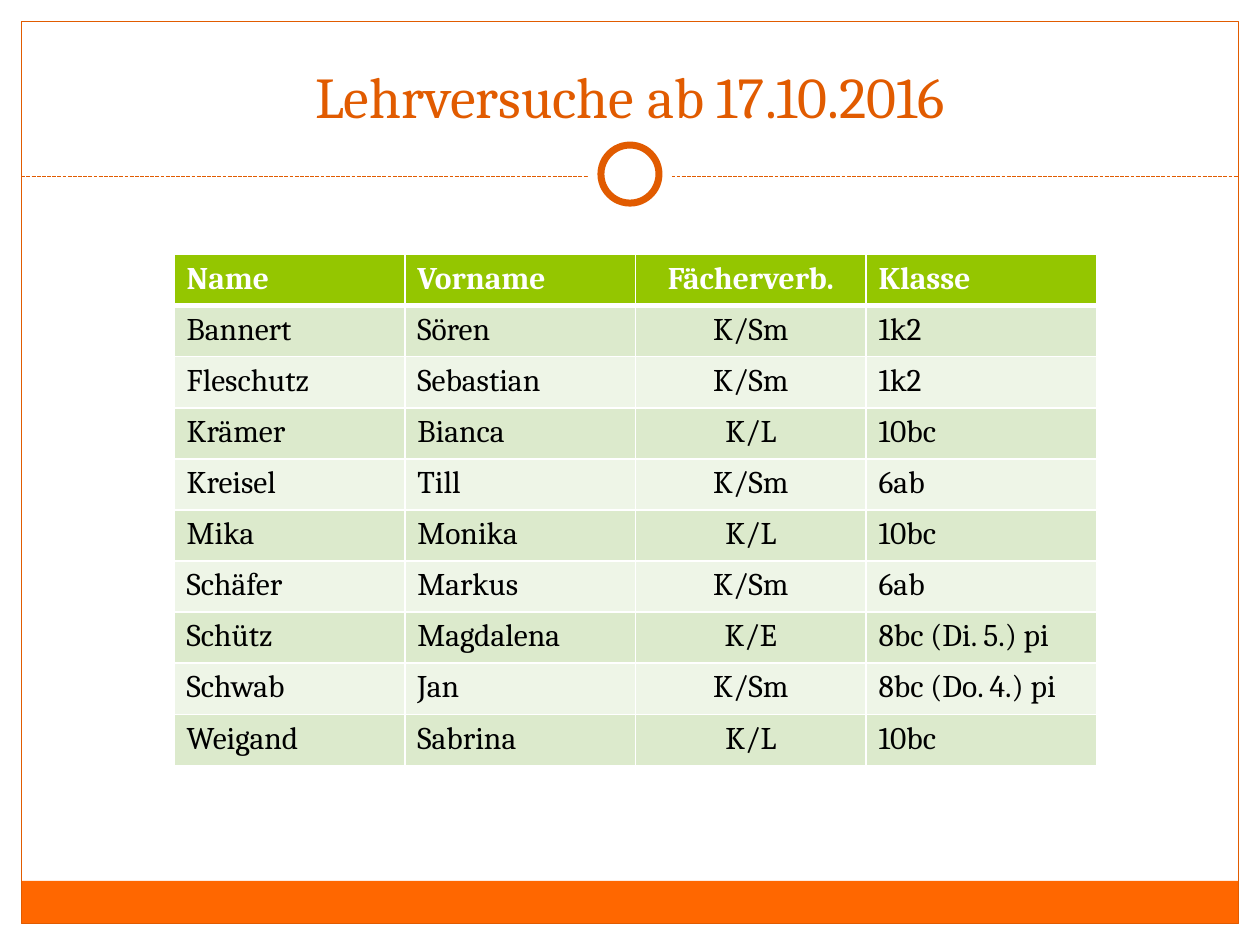
import dataclasses

import lxml.etree
import pptx
import pptx.dml.color
import pptx.enum.dml
import pptx.enum.shapes
import pptx.enum.text
import pptx.oxml.ns
import pptx.util

Cm = pptx.util.Cm
Pt = pptx.util.Pt
Align = pptx.enum.text.PP_ALIGN
Anchor = pptx.enum.text.MSO_ANCHOR
Shapes = pptx.enum.shapes.MSO_SHAPE


@dataclasses.dataclass(frozen=True)
class Theme:
    font: str = "Cambria"
    title_size: float = 33
    table_size: float = 18
    accent: str = "E15B00"
    bar: str = "FF6700"
    header: str = "94C600"
    bands: tuple = ("DCEACC", "EEF5E7")
    white: str = "FFFFFF"
    black: str = "000000"


@dataclasses.dataclass(frozen=True)
class Box:
    left: float
    top: float
    width: float
    height: float

    def lengths(self):
        return [Cm(value) for value in dataclasses.astuple(self)]


THEME = Theme()
HEADINGS = ("Name", "Vorname", "Fächerverb.", "Klasse")
LESSONS = (
    ("Bannert", "Sören", "K/Sm", "1k2"),
    ("Fleschutz", "Sebastian", "K/Sm", "1k2"),
    ("Krämer", "Bianca", "K/L", "10bc"),
    ("Kreisel", "Till", "K/Sm", "6ab"),
    ("Mika", "Monika", "K/L", "10bc"),
    ("Schäfer", "Markus", "K/Sm", "6ab"),
    ("Schütz", "Magdalena", "K/E", "8bc (Di. 5.) pi"),
    ("Schwab", "Jan", "K/Sm", "8bc (Do. 4.) pi"),
    ("Weigand", "Sabrina", "K/L", "10bc"),
)
CENTRED_COLUMN = HEADINGS.index("Fächerverb.")


def color(value):
    return pptx.dml.color.RGBColor.from_string(value)


def write_text(text_frame, text, size, fill, bold=False, align=Align.LEFT):
    paragraph = text_frame.paragraphs[0]
    paragraph.alignment = align
    run = paragraph.add_run()
    run.text = text
    run.font.name = THEME.font
    run.font.size = Pt(size)
    run.font.bold = bold
    run.font.color.rgb = color(fill)


def add_shape(slide, kind, box, fill=None, line=None, line_width=0.75):
    shape = slide.shapes.add_shape(kind, *box.lengths())
    shape.shadow.inherit = False
    if fill:
        shape.fill.solid()
        shape.fill.fore_color.rgb = color(fill)
    else:
        shape.fill.background()
    if line:
        shape.line.color.rgb = color(line)
        shape.line.width = Pt(line_width)
    else:
        shape.line.fill.background()


def add_circle(slide, center_x, center_y, diameter, **style):
    box = Box(center_x - diameter / 2, center_y - diameter / 2, diameter, diameter)
    add_shape(slide, Shapes.OVAL, box, **style)


def add_divider(slide, left, right, y):
    connector = slide.shapes.add_connector(
        pptx.enum.shapes.MSO_CONNECTOR.STRAIGHT, Cm(left), Cm(y), Cm(right), Cm(y))
    connector.line.color.rgb = color(THEME.accent)
    connector.line.width = Pt(0.75)
    connector.line.dash_style = pptx.enum.dml.MSO_LINE.SQUARE_DOT
    properties = connector.element.spPr
    lxml.etree.SubElement(properties, pptx.oxml.ns.qn("a:effectLst"))


def add_frame(slide, box):
    bar_height = 0.86
    bar = Box(box.left, box.top + box.height - bar_height, box.width, bar_height)
    add_shape(slide, Shapes.RECTANGLE, bar, fill=THEME.bar)
    add_shape(slide, Shapes.RECTANGLE, box, line=THEME.accent)
    add_divider(slide, box.left, box.left + box.width, box.top + 3.13)
    center = (box.left + box.width / 2, box.top + 3.08)
    add_circle(slide, *center, 1.7, fill=THEME.white)
    add_circle(slide, *center, 1.17, fill=THEME.white, line=THEME.accent, line_width=4)


def add_title(slide, box, text):
    text_frame = slide.shapes.add_textbox(*box.lengths()).text_frame
    text_frame.word_wrap = True
    text_frame.vertical_anchor = Anchor.BOTTOM
    write_text(text_frame, text, THEME.title_size, THEME.accent, align=Align.CENTER)


def set_borders(cell, **widths):
    qn = pptx.oxml.ns.qn
    properties = cell._tc.get_or_add_tcPr()
    for side, width in widths.items():
        line = lxml.etree.SubElement(properties, qn(f"a:ln{side}"), w=str(Pt(width)))
        fill = lxml.etree.SubElement(line, qn("a:solidFill"))
        lxml.etree.SubElement(fill, qn("a:srgbClr"), val=THEME.white)


def add_lesson_table(slide, box):
    rows = (HEADINGS,) + LESSONS
    table = slide.shapes.add_table(len(rows), len(HEADINGS), *box.lengths()).table
    for column in table.columns:
        column.width = Cm(box.width / len(HEADINGS))
    for row_index, values in enumerate(rows):
        table.rows[row_index].height = Cm(box.height / len(rows))
        is_header = row_index == 0
        fill = THEME.header if is_header else THEME.bands[(row_index - 1) % 2]
        for column_index, text in enumerate(values):
            cell = table.cell(row_index, column_index)
            set_borders(cell, L=1, R=1, T=3 if row_index == 1 else 1,
                        B=3 if is_header else 1)
            cell.fill.solid()
            cell.fill.fore_color.rgb = color(fill)
            write_text(
                cell.text_frame, text, THEME.table_size,
                THEME.white if is_header else THEME.black, bold=is_header,
                align=Align.CENTER if column_index == CENTRED_COLUMN else Align.LEFT)


def main():
    presentation = pptx.Presentation()
    presentation.slide_width = Cm(25.4)
    presentation.slide_height = Cm(19.05)
    slide = presentation.slides.add_slide(presentation.slide_layouts[6])
    add_frame(slide, Box(0.43, 0.43, 24.54, 18.19))
    add_title(slide, Box(0.85, 0.64, 23.7, 2.11), "Lehrversuche ab 17.10.2016")
    add_lesson_table(slide, Box(3.51, 5.13, 18.6, 10.3))
    presentation.save("out.pptx")


if __name__ == "__main__":
    main()
